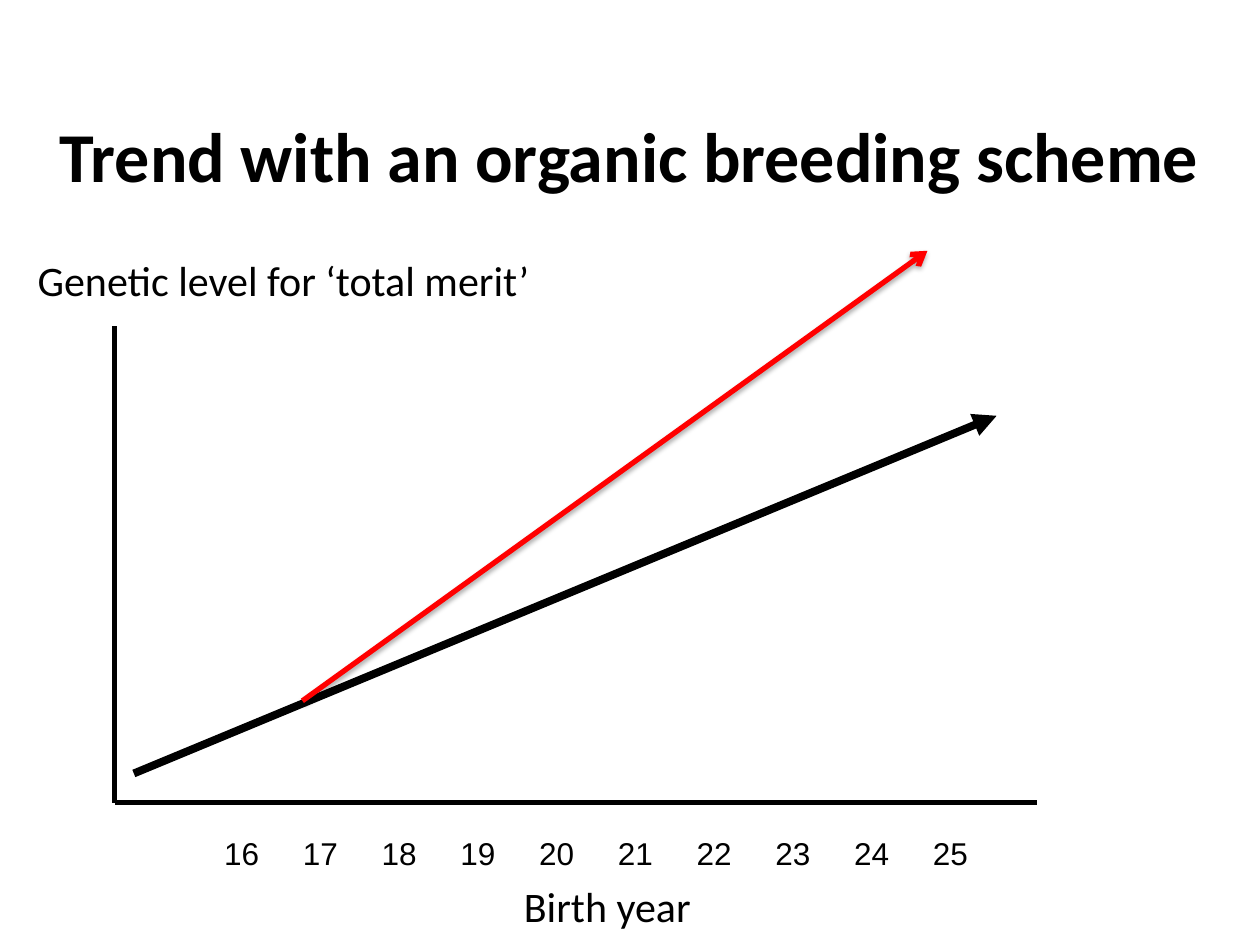
from dataclasses import dataclass

from lxml.etree import SubElement
from pptx import Presentation
from pptx.dml.color import RGBColor
from pptx.enum.shapes import MSO_CONNECTOR
from pptx.enum.text import MSO_ANCHOR, MSO_AUTO_SIZE, PP_ALIGN
from pptx.oxml.ns import qn
from pptx.util import Pt


@dataclass(frozen=True)
class Theme:
    ink: RGBColor = RGBColor(0, 0, 0)
    organic: RGBColor = RGBColor(255, 0, 0)
    body_font: str = "Calibri"
    year_font: str = "Arial"
    title_size: int = 40
    label_size: int = 24
    year_size: int = 18


THEME = Theme()
ORIGIN = (65.5, 458.6)
YEARS = range(16, 26)
YEAR_STEP = 45


def add_line(s, start, end, color, width, head=None, shadow=False):
    line = s.shapes.add_connector(
        MSO_CONNECTOR.STRAIGHT, *(Pt(v) for v in (*start, *end)))
    line.line.color.rgb = color
    line.line.width = Pt(width)
    if head:
        SubElement(line.line._get_or_add_ln(), qn("a:tailEnd"), type=head)
    effects = SubElement(line._element.spPr, qn("a:effectLst"))
    if shadow:
        outer = SubElement(effects, qn("a:outerShdw"), blurRad=str(Pt(3.1)),
                           dist=str(Pt(1.8)), dir="5400000", rotWithShape="0")
        black = SubElement(outer, qn("a:srgbClr"), val="000000")
        SubElement(black, qn("a:alpha"), val="35000")
    return line


def add_text(s, text, box, size, font=THEME.body_font, bold=False,
             wrap=False, align=PP_ALIGN.LEFT, anchor=MSO_ANCHOR.TOP, tabs=()):
    tf = s.shapes.add_textbox(*(Pt(v) for v in box)).text_frame
    tf.word_wrap = wrap
    tf.auto_size = MSO_AUTO_SIZE.NONE
    tf.vertical_anchor = anchor
    tf.text = text
    p = tf.paragraphs[0]
    p.alignment = align
    if tabs:
        stops = SubElement(p._p.get_or_add_pPr(), qn("a:tabLst"))
        for pos in tabs:
            SubElement(stops, qn("a:tab"), pos=str(Pt(pos)), algn="l")
    for r in p.runs:
        r.font.name = font
        r.font.size = Pt(size)
        r.font.bold = bold
        r.font.color.rgb = THEME.ink


def main():
    prs = Presentation()
    prs.slide_width, prs.slide_height = Pt(720), Pt(540)
    s = prs.slides.add_slide(prs.slide_layouts[6])

    # Axes
    for end in ((ORIGIN[0], 186.5), (592.5, ORIGIN[1])):
        add_line(s, end, ORIGIN, THEME.ink, 3)

    # Birth years, evenly spaced by tab stops
    add_text(s, "\t".join(str(year) for year in YEARS),
             (121, 473, 590, 29), THEME.year_size, THEME.year_font, wrap=True,
             tabs=[YEAR_STEP * i for i in range(1, len(YEARS))])

    # Trends: current, then with an organic scheme
    add_line(s, (76.5, 442), (569.5, 237.6), THEME.ink, 4.5, "triangle")
    add_line(s, (172.8, 400.5), (530, 143.3), THEME.organic, 3, "arrow",
             shadow=True)

    # Title and axis labels
    add_text(s, "Genetic level for ‘total merit’", (14.4, 142, 301.7, 36),
             THEME.label_size)
    add_text(s, "Trend with an organic breeding scheme", (22.3, 49, 674.6, 79),
             THEME.title_size, bold=True, wrap=True, align=PP_ALIGN.CENTER,
             anchor=MSO_ANCHOR.MIDDLE)
    add_text(s, "Birth year", (292.3, 499.7, 111, 36), THEME.label_size)

    prs.save("out.pptx")


if __name__ == "__main__":
    main()
